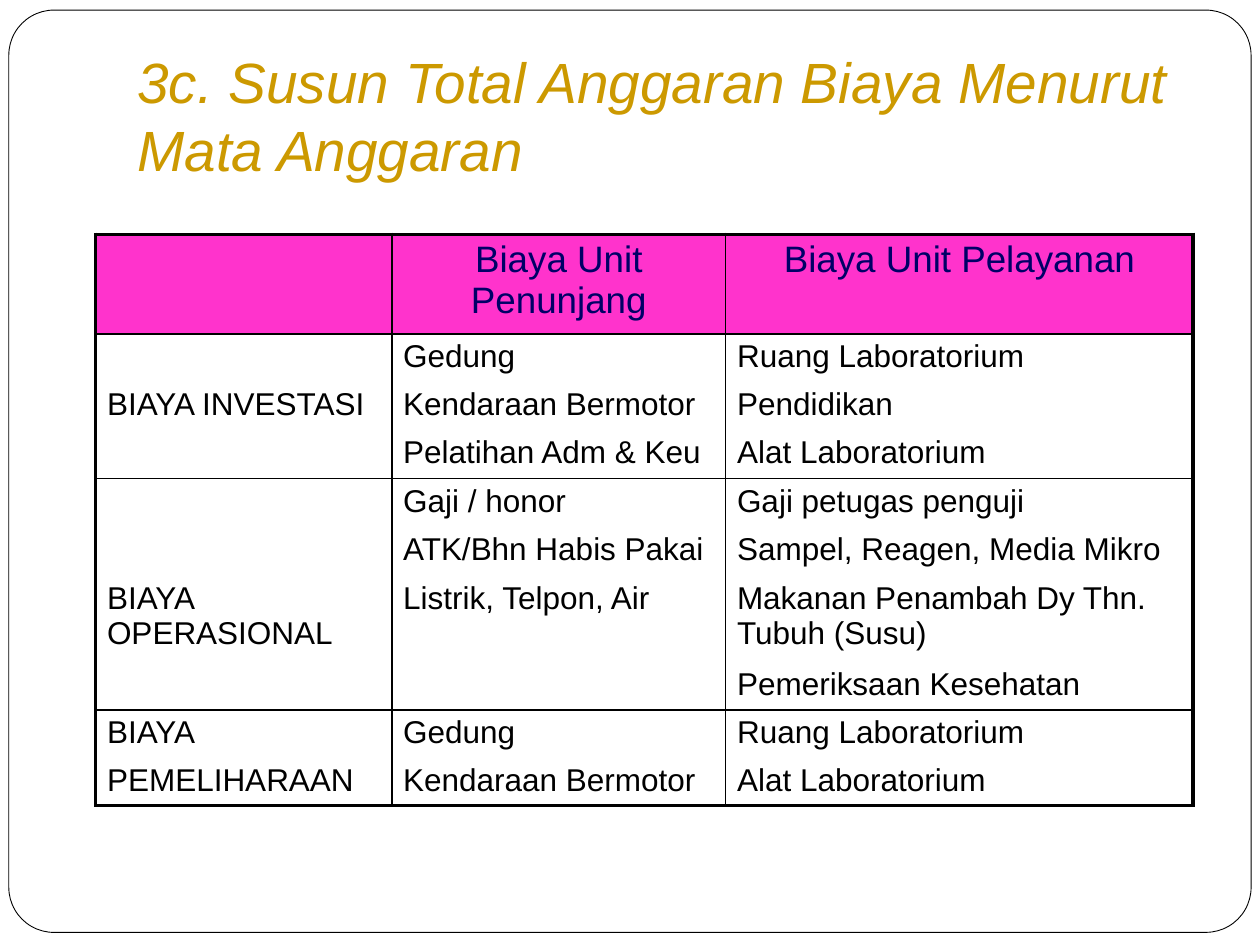
from dataclasses import dataclass

from lxml.etree import SubElement
from pptx import Presentation
from pptx.dml.color import RGBColor
from pptx.enum.shapes import MSO_SHAPE
from pptx.enum.text import MSO_ANCHOR, MSO_AUTO_SIZE, PP_ALIGN
from pptx.oxml.ns import qn
from pptx.util import Inches, Pt


@dataclass(frozen=True)
class Theme:
    font: str = "Arial"
    paper: str = "FFFFFF"
    ink: str = "000000"
    gold: str = "CC9900"
    navy: str = "000066"
    pink: str = "FF33CC"
    title_size: float = 32.4
    header_size: float = 21
    body_size: float = 18
    frame_line: float = 0.5
    thin_line: float = 1
    thick_line: float = 2.25


THEME = Theme()

HEADER = ("", "Biaya Unit Penunjang", "Biaya Unit Pelayanan")
# Each group is ruled off from the next; its rows have no lines between them
GROUPS = (
    (
        ("", "Gedung", "Ruang Laboratorium"),
        ("BIAYA INVESTASI", "Kendaraan Bermotor", "Pendidikan"),
        ("", "Pelatihan Adm & Keu", "Alat Laboratorium"),
    ),
    (
        ("", "Gaji / honor", "Gaji petugas penguji"),
        ("", "ATK/Bhn Habis Pakai", "Sampel, Reagen, Media Mikro"),
        ("BIAYA OPERASIONAL", "Listrik, Telpon, Air",
         "Makanan Penambah Dy Thn. Tubuh (Susu)"),
        ("", "", "Pemeriksaan Kesehatan"),
    ),
    (
        ("BIAYA", "Gedung", "Ruang Laboratorium"),
        ("PEMELIHARAAN", "Kendaraan Bermotor", "Alat Laboratorium"),
    ),
)
COLUMN_WIDTHS = (2.35, 2.65, 3.71)
HEADER_HEIGHT, ROW_HEIGHT, TALL_ROW_HEIGHT = 0.79, 0.38, 0.68
TALL_ROW = 6


def write_text(frame, text, *, size, color, italic=False, align=PP_ALIGN.LEFT):
    """Put one formatted paragraph into a text frame."""
    para = frame.paragraphs[0]
    para.alignment = align
    para.font.size = Pt(size)
    if text:
        span = para.add_run()
        span.text = text
        span.font.name = THEME.font
        span.font.size = Pt(size)
        span.font.italic = italic
        span.font.color.rgb = RGBColor.from_string(color)


def set_borders(cell, left, right, top, bottom):
    """Draw the four cell borders; a width of 0 hides that border."""
    properties = cell._tc.get_or_add_tcPr()
    widths = {"a:lnL": left, "a:lnR": right, "a:lnT": top, "a:lnB": bottom}
    for tag, width in widths.items():
        line = SubElement(properties, qn(tag), w=str(Pt(width)))
        if width:
            fill = SubElement(line, qn("a:solidFill"))
            SubElement(fill, qn("a:srgbClr"), val=THEME.ink)
        else:
            SubElement(line, qn("a:noFill"))


def add_frame(page):
    """Rounded page border, sent behind everything else."""
    frame = page.shapes.add_shape(
        MSO_SHAPE.ROUNDED_RECTANGLE,
        Inches(0.07), Inches(0.08), Inches(9.86), Inches(7.32))
    frame.adjustments[0] = 0.049
    frame.shadow.inherit = False
    frame.fill.solid()
    frame.fill.fore_color.rgb = RGBColor.from_string(THEME.paper)
    frame.line.color.rgb = RGBColor.from_string(THEME.ink)
    frame.line.width = Pt(THEME.frame_line)
    page.shapes._spTree.insert(2, frame._element)


def add_title(page, text):
    title = page.shapes.title
    title.left, title.top = Inches(1), Inches(0.3)
    title.width, title.height = Inches(8.5), Inches(1.25)
    box = title.text_frame
    box.word_wrap = True
    box.auto_size = MSO_AUTO_SIZE.NONE
    box.vertical_anchor = MSO_ANCHOR.BOTTOM
    box.margin_left = box.margin_right = Inches(0.09)
    box.margin_top, box.margin_bottom = Inches(0.04), Inches(0.1)
    write_text(box, text, size=THEME.title_size, color=THEME.gold, italic=True)


def format_cell(cell, text, is_header):
    cell.margin_left = cell.margin_right = Inches(0.09)
    cell.margin_top = cell.margin_bottom = Inches(0.04)
    if is_header:
        cell.fill.solid()
        cell.fill.fore_color.rgb = RGBColor.from_string(THEME.pink)
        write_text(cell.text_frame, text, size=THEME.header_size,
                   color=THEME.navy, align=PP_ALIGN.CENTER)
    else:
        cell.fill.background()
        write_text(cell.text_frame, text, size=THEME.body_size, color=THEME.ink)


def add_budget_table(page):
    rows = [HEADER] + [row for group in GROUPS for row in group]
    heights = [HEADER_HEIGHT] + [ROW_HEIGHT] * (len(rows) - 1)
    heights[TALL_ROW] = TALL_ROW_HEIGHT

    # Row indexes below which a horizontal rule runs
    ruled = {0}
    for group in GROUPS:
        ruled.add(max(ruled) + len(group))

    table = page.shapes.add_table(
        len(rows), len(COLUMN_WIDTHS), Inches(0.76), Inches(1.86),
        Inches(sum(COLUMN_WIDTHS)), Inches(sum(heights))).table
    table.first_row = table.horz_banding = False
    for column, width in zip(table.columns, COLUMN_WIDTHS):
        column.width = Inches(width)
    for row, height in zip(table.rows, heights):
        row.height = Inches(height)

    thin, thick = THEME.thin_line, THEME.thick_line
    last_row, last_column = len(rows) - 1, len(COLUMN_WIDTHS) - 1
    for r, texts in enumerate(rows):
        for c, text in enumerate(texts):
            cell = table.cell(r, c)
            set_borders(
                cell,
                left=thick if c == 0 else thin,
                right=thick if c == last_column else thin,
                top=thick if r == 0 else thin * (r - 1 in ruled),
                bottom=thick if r == last_row else thin * (r in ruled))
            format_cell(cell, text, is_header=r == 0)


def main():
    deck = Presentation()
    deck.slide_width, deck.slide_height = Inches(10), Inches(7.5)
    page = deck.slides.add_slide(deck.slide_layouts[5])
    add_frame(page)
    add_title(page, "3c. Susun Total Anggaran Biaya Menurut Mata Anggaran")
    add_budget_table(page)
    deck.save("out.pptx")


if __name__ == "__main__":
    main()
